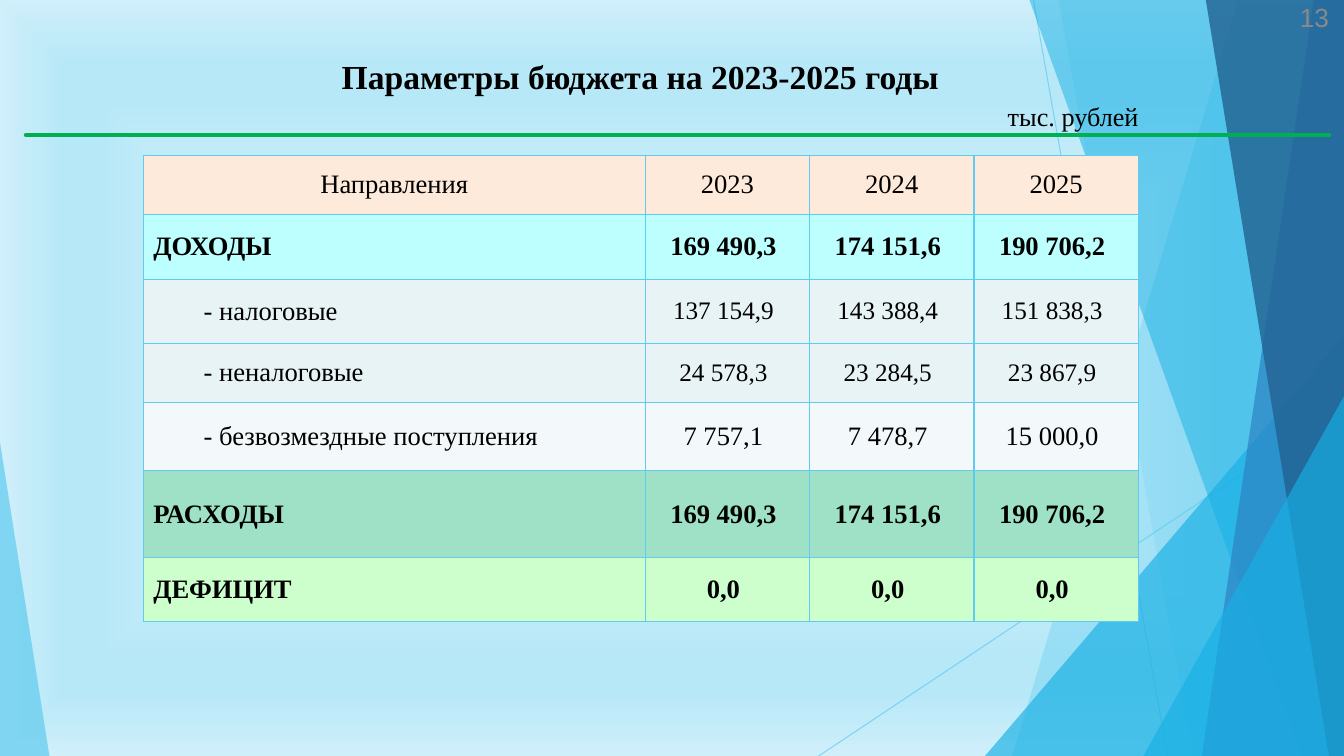
"""Build the slide with the budget parameters for 2023-2025."""
from lxml.etree import SubElement
from pptx import Presentation
from pptx.dml.color import RGBColor
from pptx.enum.shapes import MSO_CONNECTOR, MSO_SHAPE
from pptx.enum.text import MSO_ANCHOR, MSO_AUTO_SIZE, PP_ALIGN
from pptx.oxml.ns import qn
from pptx.util import Inches, Pt

WIDTH, HEIGHT = 13.33, 7.5
SERIF = "Times New Roman"
SKY, BLUE, MID_BLUE, NAVY = "5FCBEF", "17B0E4", "2E83C3", "226292"
LEFT, CENTER, RIGHT = PP_ALIGN.LEFT, PP_ALIGN.CENTER, PP_ALIGN.RIGHT
LABEL_INSETS = 0.1, 0.03, 0.1, 0.03
VALUE_INSETS = 0.13, 0.07, 0.21, 0.07

BACKDROP_STOPS = [(0, "F7FCFE"), (74, "B7E8F8"), (83, "B7E8F8"), (100, "CFEFFA")]
RAYS = [((10.25, 0), (11.58, HEIGHT)), ((WIDTH, 4.03), (8.12, HEIGHT))]
FACETS = [
    ("band", 12.28, 10.04, SKY, 36),
    ("band", 10.5, 11.83, SKY, 20),
    ("triangle", (9.77, 3.33, 3.56, 4.17), 1, BLUE, 66),
    ("band", 10.21, 12.91, BLUE, 50),
    ("band", 13.03, 11.92, MID_BLUE, 70),
    ("band", 11.96, 13.18, NAVY, 80),
    ("triangle", (11.34, 3.93, 1.99, 3.57), 1, BLUE, 66),
    ("triangle", (0, 4.39, 0.49, 3.11), 0, SKY, 70),
]

COLUMN_WIDTHS = [4.98, 1.63, 1.63, 1.63]
BUDGET = [
    ("header", 0.59, "FDEADA", 19, ["Направления", "2023", "2024", "2025"]),
    ("total", 0.64, "BDFFFF", 19, ["ДОХОДЫ", "169 490,3", "174 151,6", "190 706,2"]),
    ("item", 0.64, "E7F3F4", 18, ["- налоговые", "137 154,9", "143 388,4", "151 838,3"]),
    ("item", 0.58, "E7F3F4", 18, ["- неналоговые", "24 578,3", "23 284,5", "23 867,9"]),
    ("item", 0.68, "F3F9FA", 19,
     ["- безвозмездные поступления", "7 757,1", "7 478,7", "15 000,0"]),
    ("total", 0.86, "9FE1C6", 19, ["РАСХОДЫ", "169 490,3", "174 151,6", "190 706,2"]),
    ("total", 0.64, "CCFFCC", 19, ["ДЕФИЦИТ", "0,0", "0,0", "0,0"]),
]


def rgb(hex_color):
    return RGBColor.from_string(hex_color)


def add_alpha(holder, percent):
    color = next(holder.iter(qn("a:srgbClr")))
    SubElement(color, qn("a:alpha"), val=str(percent * 1000))


class BudgetSlide:
    def __init__(self, slide):
        self.slide = slide
        self.shapes = slide.shapes

    def backdrop(self, stops):
        self.slide.background.fill.gradient()
        gradient = next(self.slide.element.iter(qn("a:gradFill")))
        for child in list(gradient):
            gradient.remove(child)
        stop_list = SubElement(gradient, qn("a:gsLst"))
        for position, color in stops:
            stop = SubElement(stop_list, qn("a:gs"), pos=str(position * 1000))
            SubElement(stop, qn("a:srgbClr"), val=color)
        shade = SubElement(gradient, qn("a:path"), {"path": "shape"})
        SubElement(shade, qn("a:fillToRect"), l="50000", t="50000", r="50000", b="50000")

    def line(self, start, end, color, width, alpha=100):
        points = [Inches(value) for value in (*start, *end)]
        connector = self.shapes.add_connector(MSO_CONNECTOR.STRAIGHT, *points)
        connector.line.color.rgb = rgb(color)
        connector.line.width = Pt(width)
        properties = connector.element.spPr
        if alpha < 100:
            add_alpha(properties, alpha)
        properties.find(qn("a:ln")).set("cap", "rnd")
        SubElement(properties, qn("a:effectLst"))

    def paint(self, shape, color, alpha):
        shape.shadow.inherit = False
        shape.fill.solid()
        shape.fill.fore_color.rgb = rgb(color)
        add_alpha(shape.element.spPr, alpha)
        shape.line.fill.background()

    def band(self, top_x, bottom_x, color, alpha):
        outline = self.shapes.build_freeform(Inches(top_x), 0)
        corners = [(WIDTH, 0), (WIDTH, HEIGHT), (bottom_x, HEIGHT)]
        outline.add_line_segments([(Inches(x), Inches(y)) for x, y in corners])
        self.paint(outline.convert_to_shape(), color, alpha)

    def triangle(self, box, apex, color, alpha):
        facet = self.shapes.add_shape(MSO_SHAPE.ISOSCELES_TRIANGLE, *map(Inches, box))
        facet.adjustments[0] = apex
        self.paint(facet, color, alpha)

    def add_words(self, paragraph, text, size, align, font=SERIF, color="000000", bold=False):
        paragraph.alignment = align
        run = paragraph.add_run()
        run.text = text
        run.font.name = font
        run.font.size = Pt(size)
        run.font.bold = bold
        run.font.color.rgb = rgb(color)

    def title(self, text, box):
        heading = self.shapes.title
        heading.left, heading.top, heading.width, heading.height = map(Inches, box)
        frame = heading.text_frame
        frame.auto_size = MSO_AUTO_SIZE.NONE
        frame.vertical_anchor = MSO_ANCHOR.MIDDLE
        self.add_words(frame.paragraphs[0], text, 24, CENTER, bold=True)
        heading.element.getparent().append(heading.element)

    def text(self, text, box, anchor, **style):
        frame = self.shapes.add_textbox(*map(Inches, box)).text_frame
        frame.word_wrap = True
        frame.vertical_anchor = anchor
        self.add_words(frame.paragraphs[0], text, 18.7, RIGHT, **style)

    def cell(self, cell, text, fill, insets, size, align, bold):
        cell.margin_left, cell.margin_top, cell.margin_right, cell.margin_bottom = map(
            Inches, insets)
        cell.vertical_anchor = MSO_ANCHOR.MIDDLE
        properties = cell._tc.get_or_add_tcPr()
        for side in ("lnL", "lnR", "lnT", "lnB"):
            border = SubElement(properties, qn(f"a:{side}"), w=str(Pt(1)))
            stroke = SubElement(border, qn("a:solidFill"))
            SubElement(stroke, qn("a:srgbClr"), val=SKY)
        cell.fill.solid()
        cell.fill.fore_color.rgb = rgb(fill)
        paragraph = cell.text_frame.paragraphs[0]
        self.add_words(paragraph, text, size, align, bold=bold)
        return paragraph

    def table(self, rows, left, top):
        height = sum(row[1] for row in rows)
        box = left, top, sum(COLUMN_WIDTHS), height
        frame = self.shapes.add_table(len(rows), len(COLUMN_WIDTHS), *map(Inches, box))
        table = frame.table
        table.first_row = table.horz_banding = False
        for column, width in zip(table.columns, COLUMN_WIDTHS):
            column.width = Inches(width)
        for row, (kind, row_height, fill, value_size, texts) in zip(table.rows, rows):
            row.height = Inches(row_height)
            for index, (cell, text) in enumerate(zip(row.cells, texts)):
                is_value = index > 0 and kind != "header"
                paragraph = self.cell(
                    cell, text, fill,
                    VALUE_INSETS if is_value else LABEL_INSETS,
                    value_size if is_value else 19,
                    CENTER if is_value or kind == "header" else LEFT,
                    kind == "total")
                if is_value and value_size == 19:
                    paragraph.space_before = Pt(3.6)
                if kind == "item" and not is_value:
                    paragraph.level = 1
                    indent = paragraph._p.get_or_add_pPr()
                    indent.set("marL", str(Inches(0.5)))
                    indent.set("indent", "0")


def main():
    deck = Presentation()
    deck.slide_width, deck.slide_height = Inches(WIDTH), Inches(HEIGHT)
    page = BudgetSlide(deck.slides.add_slide(deck.slide_layouts[5]))
    page.backdrop(BACKDROP_STOPS)
    for start, end in RAYS:
        page.line(start, end, SKY, 0.75, alpha=70)
    for kind, *details in FACETS:
        draw = page.band if kind == "band" else page.triangle
        draw(*details)
    page.line((0.26, 1.34), (13.18, 1.34), "00B050", 3.5)
    page.title("Параметры бюджета на 2023-2025 годы", (0.47, 0.07, 11.76, 1.37))
    page.text("тыс. рублей", (9.08, 0.95, 2.31, 0.42), MSO_ANCHOR.TOP)
    page.table(BUDGET, 1.42, 1.54)
    page.text("13", (12.65, -0.03, 0.63, 0.4), MSO_ANCHOR.MIDDLE,
              font="Arial", color="898989")
    deck.save("out.pptx")


if __name__ == "__main__":
    main()
